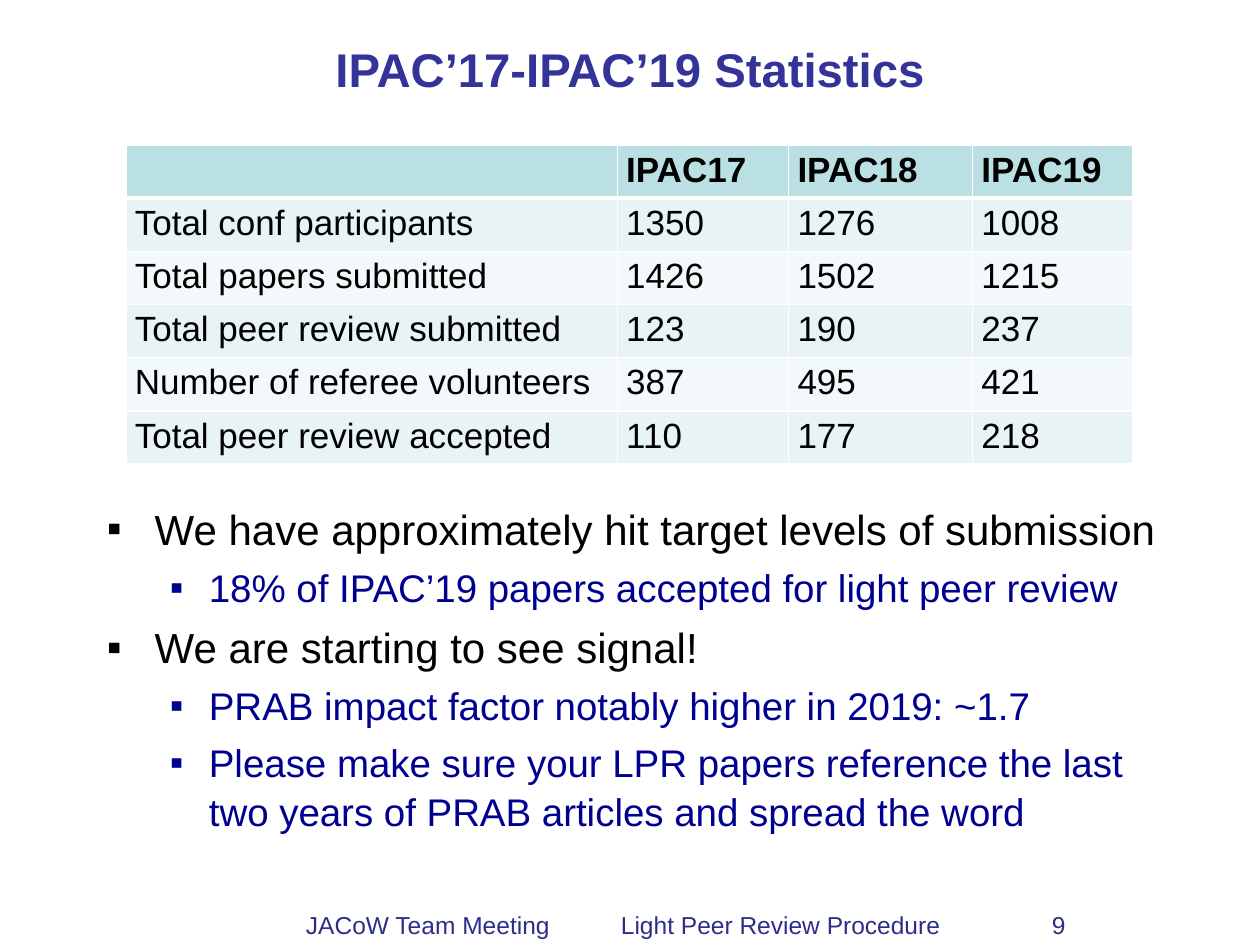
from dataclasses import dataclass
from typing import Optional

from lxml.etree import SubElement
from pptx import Presentation
from pptx.dml.color import RGBColor as RGB
from pptx.enum.text import MSO_ANCHOR as Anchor, PP_ALIGN as Align
from pptx.oxml.ns import qn
from pptx.util import Inches, Pt


@dataclass(frozen=True)
class Theme:
    font: str = "Arial"
    title: RGB = RGB(0x33, 0x33, 0x99)
    footer: RGB = RGB(0x2D, 0x2D, 0x8A)
    text: RGB = RGB(0, 0, 0)
    detail: RGB = RGB(0, 0, 0x90)
    border: str = "FFFFFF"
    header_fill: RGB = RGB(0xBB, 0xE0, 0xE3)
    odd_fill: RGB = RGB(0xE7, 0xF3, 0xF4)
    even_fill: RGB = RGB(0xF3, 0xF9, 0xFA)
    title_size: int = 27
    point_size: int = 24
    detail_size: int = 22
    table_size: int = 20
    footer_size: int = 14


@dataclass(frozen=True)
class Box:
    left: float
    top: float
    width: float
    height: float

    def emu(self) -> tuple:
        return tuple(Inches(v) for v in (self.left, self.top, self.width, self.height))


@dataclass(frozen=True)
class Label:
    text: str
    box: Box
    size: int
    color: RGB
    bold: bool = False
    align: Optional[Align] = None
    anchor: Anchor = Anchor.TOP


@dataclass(frozen=True)
class Level:
    indent: float
    hanging: float
    size: int
    color: RGB


@dataclass(frozen=True)
class Bullet:
    text: str
    level: int = 0


THEME = Theme()
LEVELS = (
    Level(0.38, 0.38, THEME.point_size, THEME.text),
    Level(0.81, 0.31, THEME.detail_size, THEME.detail),
)
LABELS = (
    Label("JACoW Team Meeting\t\tLight Peer Review Procedure",
          Box(2.33, 7.17, 5.83, 0.34), THEME.footer_size, THEME.footer),
    Label("9", Box(8.25, 7.17, 0.58, 0.34), THEME.footer_size, THEME.footer),
    Label("IPAC’17-IPAC’19 Statistics", Box(0.75, 0.17, 8.5, 0.75),
          THEME.title_size, THEME.title, True, Align.CENTER, Anchor.MIDDLE),
)
BULLETS = (
    Bullet("We have approximately hit target levels of submission"),
    Bullet("18% of IPAC’19 papers accepted for light peer review", 1),
    Bullet("We are starting to see signal!"),
    Bullet("PRAB impact factor notably higher in 2019: ~1.7", 1),
    Bullet("Please make sure your LPR papers reference the last "
           "two years of PRAB articles and spread the word", 1),
)
BULLET_BOX = Box(0.75, 3.92, 8.67, 2.33)
STATISTICS = (
    ("", "IPAC17", "IPAC18", "IPAC19"),
    ("Total conf participants", "1350", "1276", "1008"),
    ("Total papers submitted", "1426", "1502", "1215"),
    ("Total peer review submitted", "123", "190", "237"),
    ("Number of referee volunteers", "387", "495", "421"),
    ("Total peer review accepted", "110", "177", "218"),
)
COLUMN_WIDTHS = (3.9, 1.36, 1.46, 1.27)
ROW_HEIGHT = 0.41


def add_run(p, text: str, size: int, color: RGB, bold: bool = False) -> None:
    r = p.add_run()
    r.text = text
    r.font.name = THEME.font
    r.font.size = Pt(size)
    r.font.bold = bold
    r.font.color.rgb = color


def add_label(s, label: Label) -> None:
    tf = s.shapes.add_textbox(*label.box.emu()).text_frame
    tf.word_wrap = True
    tf.vertical_anchor = label.anchor
    p = tf.paragraphs[0]
    p.alignment = label.align
    add_run(p, label.text, label.size, label.color, label.bold)


def add_bullets(s, bullets: tuple[Bullet, ...], box: Box) -> None:
    tf = s.shapes.add_textbox(*box.emu()).text_frame
    tf.word_wrap = True
    for i, bullet in enumerate(bullets):
        p = tf.add_paragraph() if i else tf.paragraphs[0]
        level = LEVELS[bullet.level]
        p.level = bullet.level
        p.line_spacing = 1.06
        if i:
            p.space_before = Pt(0.2 * level.size)
        props = p._p.get_or_add_pPr()
        props.set("marL", str(Inches(level.indent)))
        props.set("indent", str(-Inches(level.hanging)))
        SubElement(props, qn("a:buFont"), typeface=THEME.font)
        SubElement(props, qn("a:buChar"), char="▪")
        add_run(p, bullet.text, level.size, level.color)


def set_borders(cell, top: int, bottom: int) -> None:
    """Draw the cell's edges; borders must precede the fill in the XML."""
    props = cell._tc.get_or_add_tcPr()
    edges = {"lnL": 1, "lnR": 1, "lnT": top, "lnB": bottom}
    for i, (edge, width) in enumerate(edges.items()):
        line = SubElement(props, qn(f"a:{edge}"), w=str(Pt(width)))
        SubElement(SubElement(line, qn("a:solidFill")), qn("a:srgbClr"), val=THEME.border)
        props.insert(i, line)


def add_statistics(s, rows: tuple, left: float, top: float) -> None:
    box = Box(left, top, sum(COLUMN_WIDTHS), ROW_HEIGHT * len(rows))
    table = s.shapes.add_table(len(rows), len(COLUMN_WIDTHS), *box.emu()).table
    for column, width in zip(table.columns, COLUMN_WIDTHS):
        column.width = Inches(width)
    for i, values in enumerate(rows):
        table.rows[i].height = Inches(ROW_HEIGHT)
        header = i == 0
        fill = THEME.header_fill if header else THEME.odd_fill if i % 2 else THEME.even_fill
        for j, value in enumerate(values):
            cell = table.cell(i, j)
            cell.margin_left = cell.margin_right = Inches(0.07)
            cell.margin_top = cell.margin_bottom = Pt(3.2)
            cell.fill.solid()
            cell.fill.fore_color.rgb = fill
            set_borders(cell, top=3 if i == 1 else 1, bottom=3 if header else 1)
            if value:
                add_run(cell.text_frame.paragraphs[0], value,
                        THEME.table_size, THEME.text, header)


def main() -> None:
    prs = Presentation()
    prs.slide_width, prs.slide_height = Inches(10), Inches(7.5)
    s = prs.slides.add_slide(prs.slide_layouts[6])
    for label in LABELS:
        add_label(s, label)
    add_bullets(s, BULLETS, BULLET_BOX)
    add_statistics(s, STATISTICS, 1, 1.15)
    prs.save("out.pptx")


if __name__ == "__main__":
    main()
